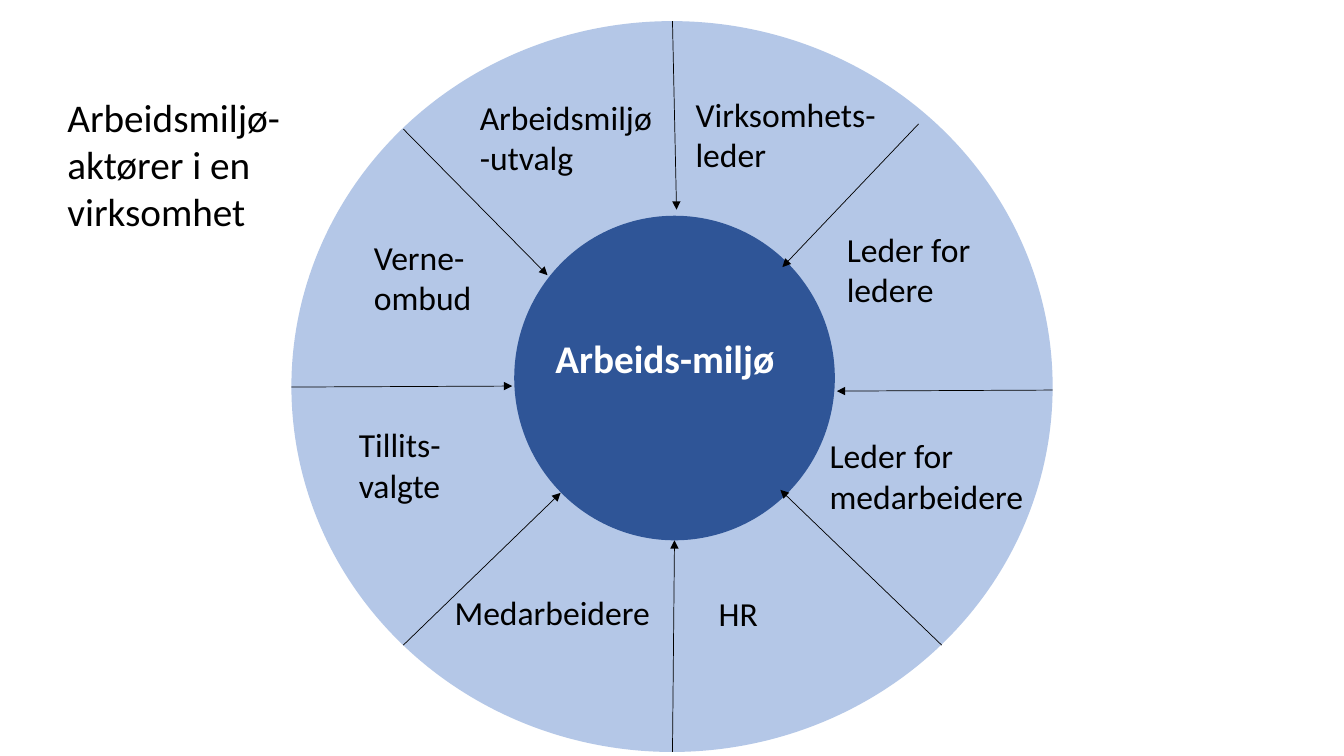
from dataclasses import dataclass

from lxml import etree
from pptx import Presentation
from pptx.dml.color import RGBColor
from pptx.enum.shapes import MSO_CONNECTOR, MSO_SHAPE
from pptx.enum.text import MSO_AUTO_SIZE, PP_ALIGN
from pptx.oxml.ns import qn
from pptx.util import Inches, Pt

DISC = MSO_SHAPE.FLOWCHART_CONNECTOR
STRAIGHT = MSO_CONNECTOR.STRAIGHT
GROW = MSO_AUTO_SIZE.SHAPE_TO_FIT_TEXT
LEFT, CENTER = PP_ALIGN.LEFT, PP_ALIGN.CENTER


@dataclass(frozen=True)
class Theme:
    """Colours, font and type sizes of the slide."""
    ring: RGBColor = RGBColor(0xB4, 0xC7, 0xE7)
    hub: RGBColor = RGBColor(0x2F, 0x55, 0x97)
    ink: RGBColor = RGBColor(0, 0, 0)
    white: RGBColor = RGBColor(0xFF, 0xFF, 0xFF)
    font: str = "Calibri"
    heading: Pt = Pt(28)
    actor: Pt = Pt(24)
    spoke: Pt = Pt(0.5)


THEME = Theme()

HUB = (2.21, 1.93, 3.18, 3.22)
HUB_LABEL = (2.52, 3.06, 2.37, 1.04)

ACTORS = [
    ("Arbeidsmiljø-utvalg", (1.77, 0.70, 1.95, 0.91)),
    ("Virksomhets-leder", (3.91, 0.67, 1.99, 0.91)),
    ("Leder for ledere", (5.41, 2.01, 1.61, 0.91)),
    ("Leder for medarbeidere", (5.24, 4.06, 2.19, 0.91)),
    ("HR", (4.14, 5.62, 0.91, 0.5)),
    ("Medarbeidere", (1.52, 5.61, 2.28, 0.5)),
    ("Tillits-valgte", (0.57, 3.95, 1.48, 0.91)),
    ("Verne-ombud", (0.72, 2.09, 1.22, 0.91)),
]

SPOKES = [
    ((3.78, 0), (3.82, 1.87)),
    ((6.22, 1.02), (4.87, 2.44)),
    ((7.55, 3.66), (5.41, 3.67)),
    ((6.45, 6.19), (4.85, 4.65)),
    ((3.78, 7.25), (3.80, 5.15)),
    ((1.11, 6.19), (2.67, 4.68)),
    ((0, 3.63), (2.19, 3.62)),
    ((1.11, 1.07), (2.54, 2.52)),
]


def within(box, part):
    """Return the slide box of a part whose place is relative to box."""
    return box[0] + part[0], box[1] + part[1], part[2], part[3]


def add_text(slide, box, words, size, color, align=LEFT, bold=False):
    """Add a wrapping text box with one paragraph."""
    frame = slide.shapes.add_textbox(*map(Inches, box)).text_frame
    frame.word_wrap = True
    frame.auto_size = GROW
    paragraph = frame.paragraphs[0]
    paragraph.text = words
    paragraph.alignment = align
    paragraph.font.name = THEME.font
    paragraph.font.size = size
    paragraph.font.bold = bold
    paragraph.font.color.rgb = color


def add_disc(slide, box, color):
    """Add a plain round shape that fills the box."""
    disc = slide.shapes.add_shape(DISC, *map(Inches, box))
    disc.shadow.inherit = False
    disc.fill.solid()
    disc.fill.fore_color.rgb = color
    disc.line.fill.background()


def add_spoke(slide, box, rim, tip):
    """Add an arrow from the rim of the wheel to its hub."""
    ends = [Inches(origin + offset) for point in (rim, tip)
            for origin, offset in zip(box, point)]
    spoke = slide.shapes.add_connector(STRAIGHT, *ends)
    spoke.line.color.rgb = THEME.ink
    spoke.line.width = THEME.spoke
    etree.SubElement(spoke.line._get_or_add_ln(), qn("a:tailEnd"), type="triangle")
    etree.SubElement(spoke._element.spPr, qn("a:effectLst"))


def add_wheel(slide, box):
    """Draw the ring, the hub, the actors and the arrows between them."""
    add_disc(slide, box, THEME.ring)
    add_disc(slide, within(box, HUB), THEME.hub)
    add_text(slide, within(box, HUB_LABEL), "Arbeids-miljø",
             THEME.heading, THEME.white, CENTER, True)
    for actor, place in ACTORS:
        add_text(slide, within(box, place), actor, THEME.actor, THEME.ink)
    for rim, tip in SPOKES:
        add_spoke(slide, box, rim, tip)


def add_heading(slide, box):
    """Write the heading of the slide."""
    add_text(slide, box, "Arbeidsmiljø-aktører i en virksomhet",
             THEME.heading, THEME.ink)


def main():
    """Build and save the presentation."""
    deck = Presentation()
    deck.slide_width, deck.slide_height = Inches(13.33), Inches(7.5)
    slide = deck.slides.add_slide(deck.slide_layouts[6])
    add_wheel(slide, (2.89, 0.21, 7.55, 7.25))
    add_heading(slide, (0.57, 0.88, 3.11, 1.51))
    deck.save("out.pptx")


if __name__ == "__main__":
    main()
